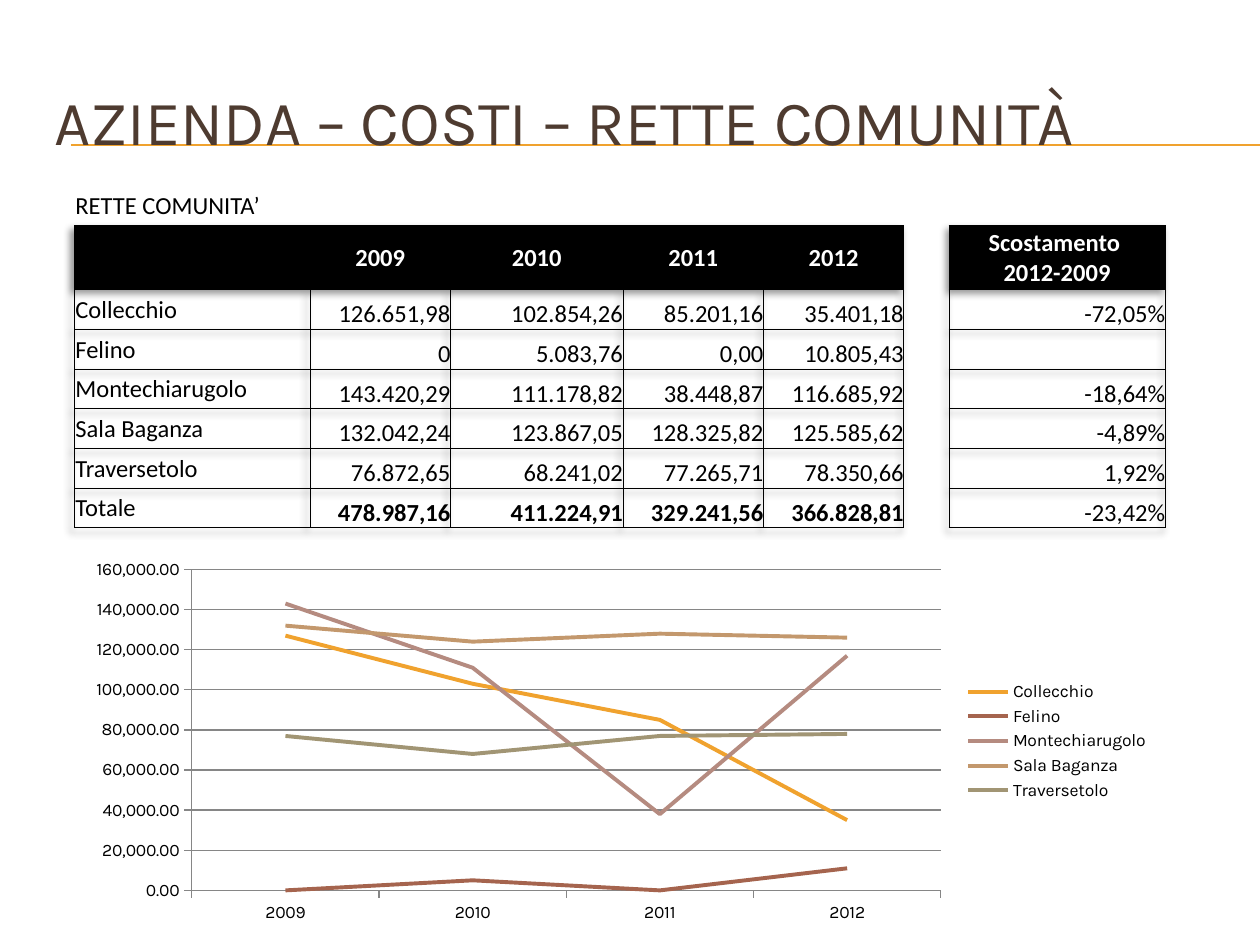
from lxml.etree import SubElement
from pptx import Presentation
from pptx.chart.data import CategoryChartData
from pptx.dml.color import RGBColor
from pptx.enum.chart import XL_CHART_TYPE as ChartType, XL_LEGEND_POSITION as LegendPosition
from pptx.enum.chart import XL_TICK_MARK as TickMark
from pptx.enum.shapes import MSO_CONNECTOR as Connector
from pptx.enum.text import MSO_ANCHOR as Anchor, PP_ALIGN as Align
from pptx.oxml import parse_xml
from pptx.oxml.ns import nsdecls, qn
from pptx.util import Cm, Pt

BLACK = RGBColor(0x00, 0x00, 0x00)
WHITE = RGBColor(0xFF, 0xFF, 0xFF)
BROWN = RGBColor(0x4E, 0x3B, 0x30)
ORANGE = RGBColor(0xF0, 0xA2, 0x2E)
GREY = RGBColor(0x86, 0x86, 0x86)
SERIES_COLORS = [
    ORANGE,
    RGBColor(0xA5, 0x64, 0x4E),
    RGBColor(0xB5, 0x8B, 0x80),
    RGBColor(0xC3, 0x98, 0x6D),
    RGBColor(0xA1, 0x95, 0x74),
]

PLAIN_TABLE_STYLE = "{2D5ABB26-0587-4C30-8999-92F81FD0307C}"
YEARS = ["2009", "2010", "2011", "2012"]
COSTS = [
    ["Collecchio", "126.651,98", "102.854,26", "85.201,16", "35.401,18", "", "-72,05%"],
    ["Felino", "0", "5.083,76", "0,00", "10.805,43", "", ""],
    ["Montechiarugolo", "143.420,29", "111.178,82", "38.448,87", "116.685,92", "", "-18,64%"],
    ["Sala Baganza", "132.042,24", "123.867,05", "128.325,82", "125.585,62", "", "-4,89%"],
    ["Traversetolo", "76.872,65", "68.241,02", "77.265,71", "78.350,66", "", "1,92%"],
    ["Totale", "478.987,16", "411.224,91", "329.241,56", "366.828,81", "", "-23,42%"],
]
CAPTION_ROW = ["RETTE COMUNITA’"] + [""] * 6
HEADER_ROW = ["", *YEARS, "", "Scostamento \n2012-2009"]
COLUMN_WIDTHS = [4.75, 2.83, 3.48, 2.83, 2.83, 0.91, 4.36]
ROW_HEIGHTS = [0.82, 1.29] + [0.8] * len(COSTS)
GAP_COLUMN = 5
TOTAL_ROW = len(ROW_HEIGHTS) - 1


def write_text(frame, text, size=14, font="Calibri", color=BLACK, bold=False, align=Align.LEFT):
    for index, line in enumerate(text.split("\n")):
        paragraph = frame.paragraphs[0] if index == 0 else frame.add_paragraph()
        paragraph.alignment = align
        run = paragraph.add_run()
        run.text = line
        run.font.size = Pt(size)
        run.font.name = font
        run.font.bold = bold
        run.font.color.rgb = color


def add_title(slide, text):
    title = slide.shapes.add_textbox(Cm(0.84), Cm(1.25), Cm(24.13), Cm(2.34))
    title.text_frame.word_wrap = True
    title.text_frame.vertical_anchor = Anchor.MIDDLE
    write_text(title.text_frame, text, size=36, font="Karla", color=BROWN)


def add_rule(slide, top):
    rule = slide.shapes.add_connector(Connector.STRAIGHT, Cm(1.43), Cm(top), Cm(25.4), Cm(top))
    rule.line.color.rgb = ORANGE
    rule.line.width = Pt(0.75)
    SubElement(rule._element.spPr, qn("a:effectLst"))


def add_borders(cell, width=0.5):
    for position, side in enumerate(["lnL", "lnR", "lnT", "lnB"]):
        border = parse_xml(
            f'<a:{side} {nsdecls("a")} w="{Pt(width)}"><a:solidFill>'
            f'<a:srgbClr val="{BLACK}"/></a:solidFill></a:{side}>'
        )
        cell._tc.get_or_add_tcPr().insert(position, border)


def add_table_shadow(properties):
    properties.insert(0, parse_xml(
        f'<a:effectLst {nsdecls("a")}>'
        '<a:outerShdw blurRad="50800" dist="38100" dir="8100000">'
        '<a:srgbClr val="000000"><a:alpha val="40000"/></a:srgbClr>'
        '</a:outerShdw></a:effectLst>'
    ))


def format_cell(cell, text, row, column):
    is_header = row == 1
    is_figure = row > 1 and column > 0
    margin = Cm(0) if is_figure or not text else Cm(0.02)
    cell.margin_left = cell.margin_right = cell.margin_top = margin
    cell.margin_bottom = Cm(0)
    cell.vertical_anchor = Anchor.BOTTOM if is_figure else Anchor.MIDDLE
    if is_header and column != GAP_COLUMN:
        cell.fill.solid()
        cell.fill.fore_color.rgb = BLACK
    else:
        cell.fill.background()
    if row > 0 and column != GAP_COLUMN:
        add_borders(cell)
    if text:
        write_text(
            cell.text_frame, text,
            color=WHITE if is_header else BLACK,
            bold=is_header or (row == TOTAL_ROW and 0 < column < GAP_COLUMN),
            align=Align.CENTER if is_header else Align.RIGHT if is_figure else Align.LEFT,
        )


def add_cost_table(slide):
    rows = [CAPTION_ROW, HEADER_ROW, *COSTS]
    table = slide.shapes.add_table(
        len(rows), len(COLUMN_WIDTHS), Cm(1.5), Cm(3.73),
        Cm(sum(COLUMN_WIDTHS)), Cm(sum(ROW_HEIGHTS)),
    ).table
    table.horz_banding = False
    table.first_row = False
    properties = table._tbl.tblPr
    properties.find(qn("a:tableStyleId")).text = PLAIN_TABLE_STYLE
    add_table_shadow(properties)
    for column, width in zip(table.columns, COLUMN_WIDTHS):
        column.width = Cm(width)
    for row, height in zip(table.rows, ROW_HEIGHTS):
        row.height = Cm(height)
    for row, texts in enumerate(rows):
        for column, text in enumerate(texts):
            format_cell(table.cell(row, column), text, row, column)


def to_thousands(figure):
    return round(float(figure.replace(".", "").replace(",", ".")) / 1000) * 1000


def add_cost_chart(slide):
    costs = CategoryChartData(number_format="#,##0.00")
    costs.categories = YEARS
    for town, *figures in COSTS[:-1]:
        costs.add_series(f"{town} ", [to_thousands(figure) for figure in figures[:len(YEARS)]])
    chart = slide.shapes.add_chart(
        ChartType.LINE, Cm(1.5), Cm(11.13), Cm(22), Cm(7.62), costs
    ).chart
    chart.has_title = False
    chart.font.size = Pt(10)
    chart.font.name = "Karla"
    chart.font.color.rgb = BLACK
    chart.has_legend = True
    chart.legend.position = LegendPosition.RIGHT
    chart.legend.include_in_layout = False
    chart.plots[0].vary_by_categories = False
    for series, color in zip(chart.plots[0].series, SERIES_COLORS):
        series.smooth = False
        series.format.line.color.rgb = color
        series.format.line.width = Pt(2.25)
    for axis in (chart.category_axis, chart.value_axis):
        axis.major_tick_mark = TickMark.OUTSIDE
        axis.format.line.color.rgb = GREY
    amounts = chart.value_axis
    amounts.minimum_scale = 0
    amounts.maximum_scale = 160000
    amounts.major_unit = 20000
    amounts.has_major_gridlines = True
    amounts.major_gridlines.format.line.color.rgb = GREY
    amounts.tick_labels.number_format = "#,##0.00"
    amounts.tick_labels.number_format_is_linked = False


def main():
    deck = Presentation()
    deck.slide_width, deck.slide_height = Cm(25.4), Cm(19.05)
    slide = deck.slides.add_slide(deck.slide_layouts[6])
    for top in (2.92, 2.94):
        add_rule(slide, top)
    add_title(slide, "AZIENDA – COSTI – RETTE COMUNITÀ")
    add_cost_table(slide)
    add_cost_chart(slide)
    deck.save("out.pptx")


if __name__ == "__main__":
    main()
